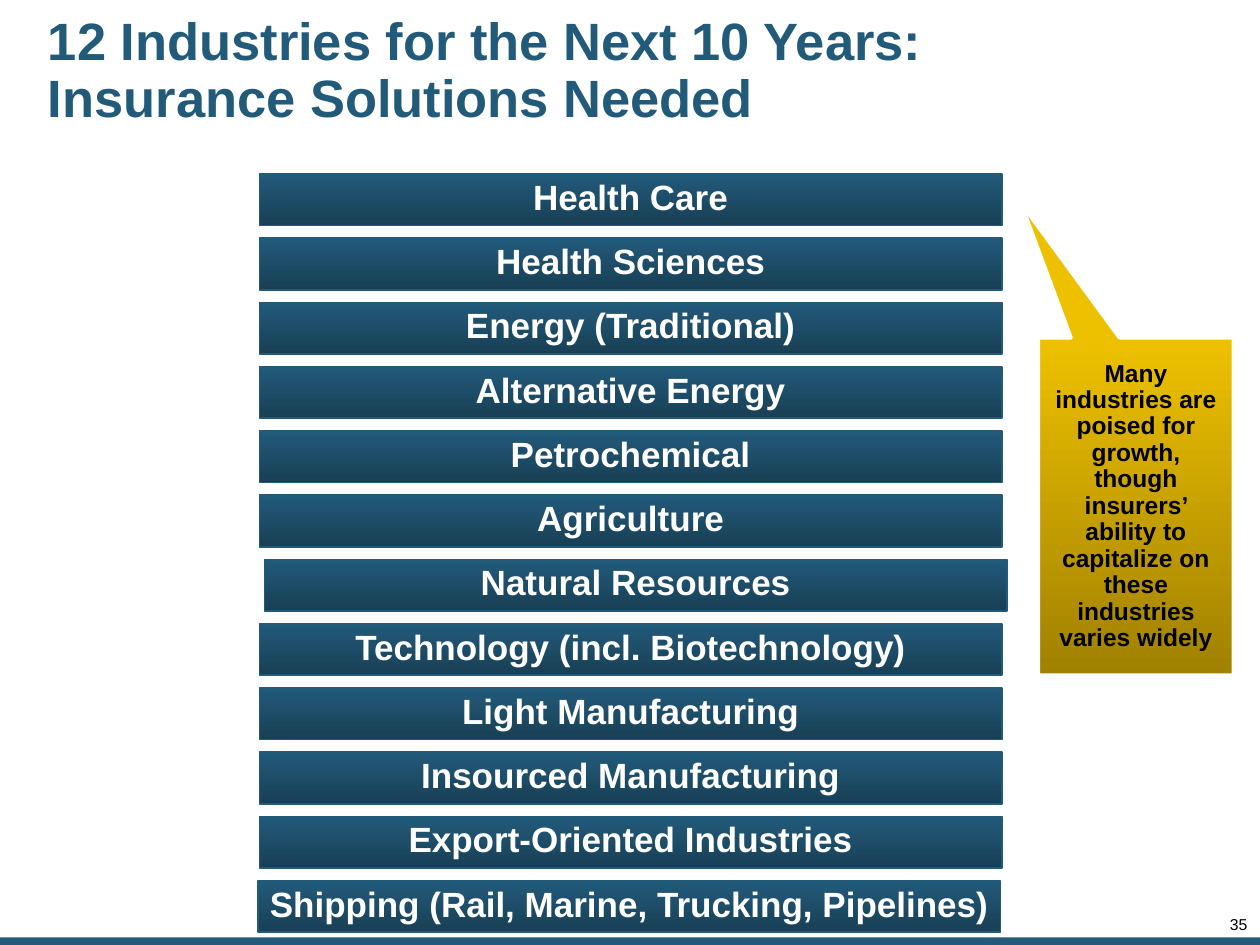
from pptx import Presentation
from pptx.dml import color
from pptx.enum import shapes, text
from pptx.util import Inches, Pt

NAVY = "225A7A"
NAVY_SHADE = "183F55"
GOLD = "EEC100"
GOLD_SHADE = "A08100"
WHITE = "FFFFFF"
BLACK = "000000"

INDUSTRIES = [
    "Health Care",
    "Health Sciences",
    "Energy (Traditional)",
    "Alternative Energy",
    "Petrochemical",
    "Agriculture",
    "Natural Resources",
    "Technology (incl. Biotechnology)",
    "Light Manufacturing",
    "Insourced Manufacturing",
    "Export-Oriented Industries",
    "Shipping (Rail, Marine, Trucking, Pipelines)",
]
SHIFTS = {"Natural Resources": 0.04, "Shipping (Rail, Marine, Trucking, Pipelines)": -0.01}


def rgb(value):
    """Turn a hex string into a colour."""
    return color.RGBColor.from_string(value)


def write_text(shape, content, size, font_color, bold, align, spacing, margins, wrap=True):
    """Set and format the single paragraph of a shape."""
    frame = shape.text_frame
    frame.text = content
    frame.word_wrap = wrap
    frame.auto_size = text.MSO_AUTO_SIZE.NONE
    frame.vertical_anchor = text.MSO_ANCHOR.MIDDLE
    (frame.margin_left, frame.margin_top,
     frame.margin_right, frame.margin_bottom) = map(Inches, margins)
    paragraph = frame.paragraphs[0]
    paragraph.alignment = align
    paragraph.line_spacing = spacing
    paragraph.space_before = Pt(0)
    font = paragraph.runs[0].font
    font.name = "Arial"
    font.size = Pt(size)
    font.bold = bold
    font.color.rgb = rgb(font_color)


def add_gradient_shape(slide, kind, box, stops, line_color, line_width):
    """Add a shape with a top-to-bottom gradient and an outline."""
    shape = slide.shapes.add_shape(kind, *map(Inches, box))
    shape.shadow.inherit = False
    shape.fill.gradient()
    shape.fill.gradient_angle = 270
    for stop, value in zip(shape.fill.gradient_stops, stops):
        stop.color.rgb = rgb(value)
    shape.line.color.rgb = rgb(line_color)
    shape.line.width = Pt(line_width)
    return shape


def place_title(slide, box):
    """Place the title placeholder in the box."""
    title = slide.shapes.title
    title.left, title.top, title.width, title.height = map(Inches, box)
    write_text(title, "12 Industries for the Next 10 Years: Insurance Solutions Needed",
               30, NAVY, True, text.PP_ALIGN.LEFT, 0.9, [0.05] * 4)


def add_industry_bars(slide, box, bar_height):
    """Stack one bar per industry evenly over the box."""
    left, top, width, height = box
    pitch = (height - bar_height) / (len(INDUSTRIES) - 1)
    for index, industry in enumerate(INDUSTRIES):
        bar_box = (left + SHIFTS.get(industry, 0), top + index * pitch, width, bar_height)
        bar = add_gradient_shape(slide, shapes.MSO_SHAPE.RECTANGLE, bar_box,
                                 (NAVY, NAVY_SHADE), NAVY, 1)
        write_text(bar, industry, 20, WHITE, True, text.PP_ALIGN.CENTER, 0.95,
                   (0.1, 0.05, 0.1, 0.07), wrap=False)


def add_growth_callout(slide, box):
    """Add the gold callout pointing up to the bars."""
    callout = add_gradient_shape(slide, shapes.MSO_SHAPE.RECTANGULAR_CALLOUT, box,
                                 (GOLD, GOLD_SHADE), WHITE, 2.25)
    callout.adjustments[0] = -0.59
    callout.adjustments[1] = -0.9
    write_text(callout,
               "Many industries are poised for growth, though insurers’ ability "
               "to capitalize on these industries varies widely",
               14, BLACK, True, text.PP_ALIGN.CENTER, 0.9, [0.1] * 4)


def add_footer(slide, strip_box, number_box):
    """Add the bottom strip and the page number."""
    strip = slide.shapes.add_shape(shapes.MSO_SHAPE.RECTANGLE, *map(Inches, strip_box))
    strip.shadow.inherit = False
    strip.fill.solid()
    strip.fill.fore_color.rgb = rgb(NAVY)
    strip.line.fill.background()
    number = slide.shapes.add_textbox(*map(Inches, number_box))
    write_text(number, "35", 9, BLACK, False, text.PP_ALIGN.RIGHT, 0.85, [0] * 4)


def main():
    """Build and save the slide."""
    presentation = Presentation()
    presentation.slide_width = Inches(10)
    presentation.slide_height = Inches(7.5)
    slide = presentation.slides.add_slide(presentation.slide_layouts[5])
    add_footer(slide, (0, 7.44, 10, 0.06), (9.41, 7.28, 0.49, 0.13))
    place_title(slide, (0.33, 0.1, 8.09, 0.94))
    add_industry_bars(slide, (2.06, 1.38, 5.89, 6.02), 0.41)
    add_growth_callout(slide, (8.24, 2.68, 1.55, 2.68))
    presentation.save("out.pptx")


if __name__ == "__main__":
    main()
